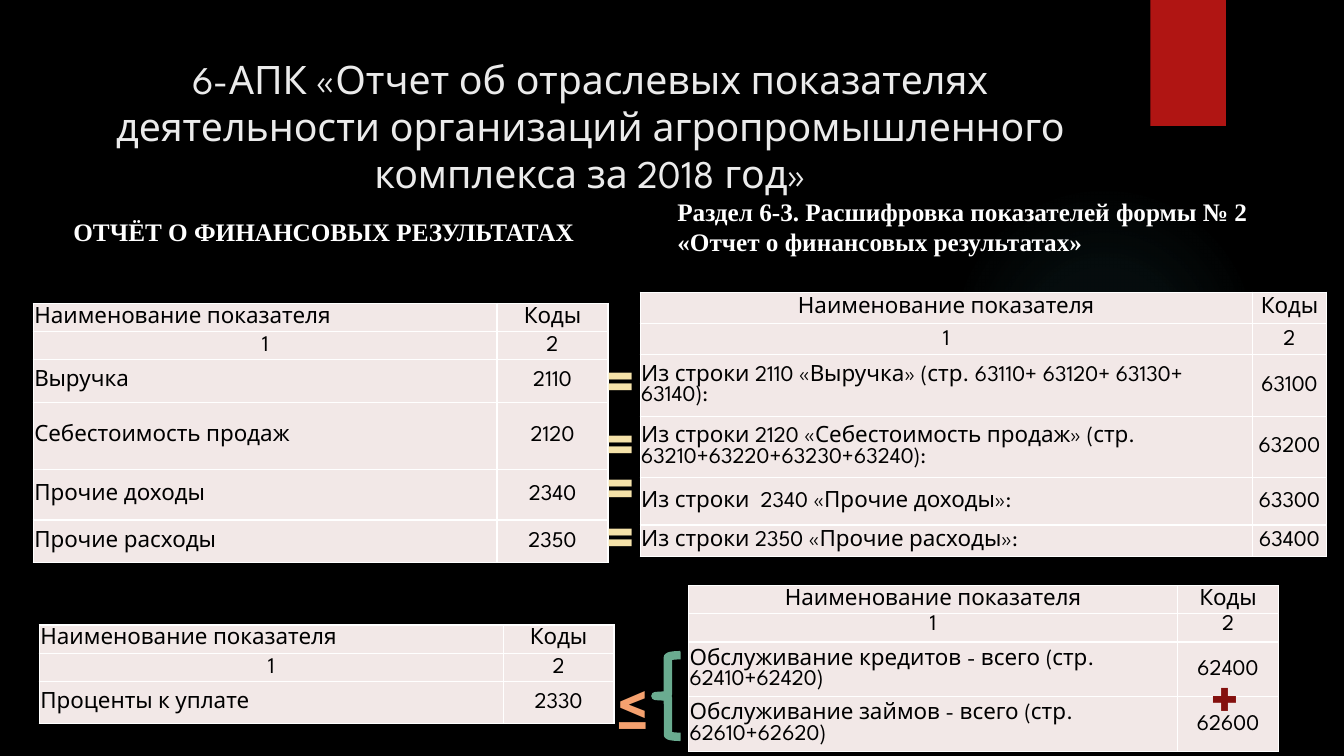
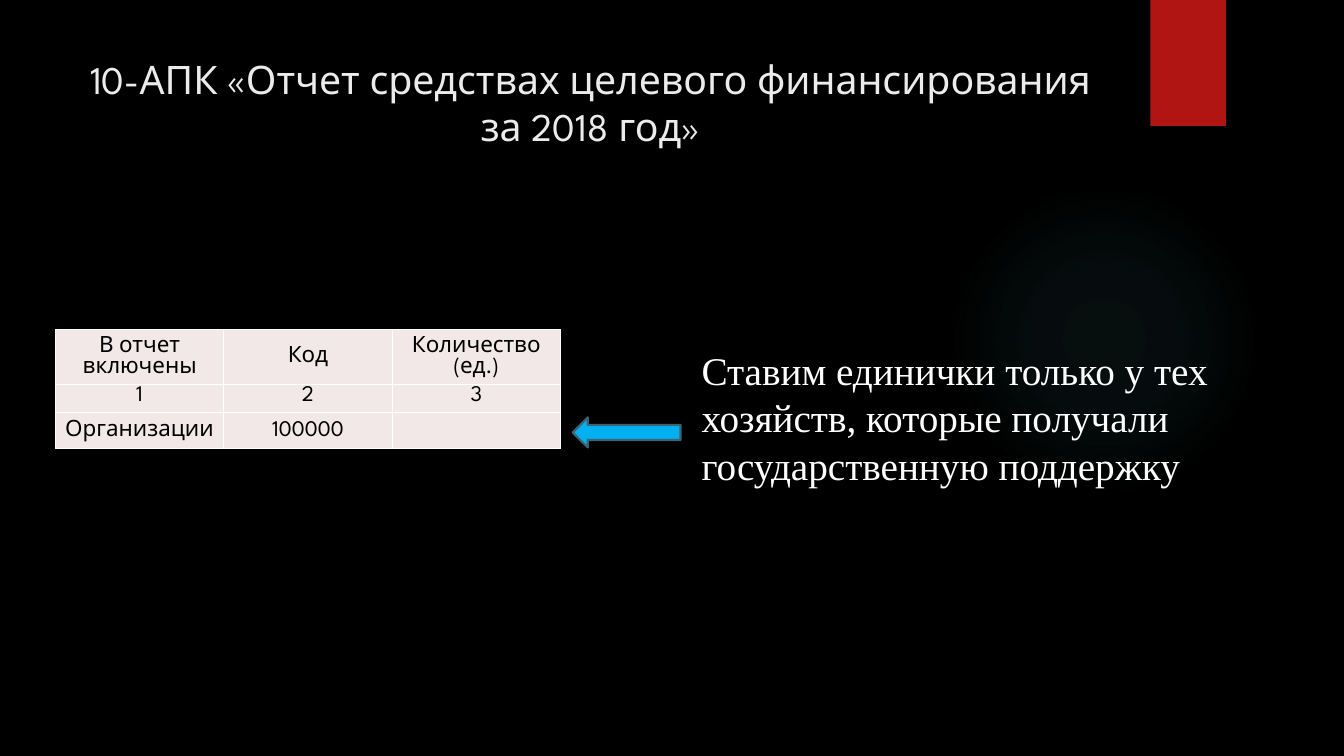
from dataclasses import dataclass

import pptx
import pptx.dml.color
import pptx.enum.shapes
import pptx.enum.text
import pptx.oxml
import pptx.oxml.ns
import pptx.util
from lxml import etree

WIDTH, HEIGHT = 13.33, 7.5
COLORS = {
    "background": "000000", "title": "EBEBEB", "text": "FFFFFF",
    "ribbon": "B01513", "glow": "50B9C1", "cell": "F2E8E7",
    "cell_text": "000000", "border": "FFFFFF", "equal": "F5E2A9",
    "less": "F4A16F", "plus": "84100E", "brace": "6AAC90",
    "arrow": "00B0F0", "arrow_line": "3E6272",
}
SANS, SERIF = "League Spartan", "Times New Roman"
SHAPE = pptx.enum.shapes.MSO_SHAPE
ALIGN = pptx.enum.text.PP_ALIGN
ANCHOR = pptx.enum.text.MSO_ANCHOR
NAME, CODE = "Наименование показателя", "Коды"


@dataclass
class Label:
    text: str
    box: tuple[float, float, float, float]
    size: float
    font: str
    color: str
    bold: bool = False
    wrap: bool = False
    align: ALIGN = ALIGN.LEFT
    anchor: ANCHOR = ANCHOR.TOP


@dataclass
class Grid:
    left: float
    top: float
    cols: list[float]
    rows: list[float]
    cells: list[tuple[str, ...]]
    left_rows: tuple[int, ...] = ()  # rows whose first cell is left-aligned
    top_row: int = -1  # row whose text sits at the top


def rgb(name: str) -> pptx.dml.color.RGBColor:
    return pptx.dml.color.RGBColor.from_string(COLORS[name])


def inches(*values: float) -> list[pptx.util.Length]:
    return [pptx.util.Inches(v) for v in values]


def style_runs(p, size: float, font: str, color: str, bold: bool = False) -> None:
    for r in p.runs:
        r.font.size = pptx.util.Pt(size)
        r.font.name = font
        r.font.bold = bold
        r.font.color.rgb = rgb(color)


def add_label(s, label: Label) -> None:
    sp = s.shapes.add_textbox(*inches(*label.box))
    tf = sp.text_frame
    tf.word_wrap = label.wrap
    tf.vertical_anchor = label.anchor
    tf.text = label.text
    p = tf.paragraphs[0]
    p.alignment = label.align
    style_runs(p, label.size, label.font, label.color, label.bold)


def add_shape(s, kind: SHAPE, box: tuple[float, float, float, float],
              fill: str = "", line: str = "", width: float = 1):
    sp = s.shapes.add_shape(kind, *inches(*box))
    sp.shadow.inherit = False
    if fill:
        sp.fill.solid()
        sp.fill.fore_color.rgb = rgb(fill)
    else:
        sp.fill.background()
    if line:
        sp.line.color.rgb = rgb(line)
        sp.line.width = pptx.util.Pt(width)
    else:
        sp.line.fill.background()
    return sp


def add_shadow(sp) -> None:
    effects = sp._element.spPr.find(pptx.oxml.ns.qn("a:effectLst"))
    effects.append(pptx.oxml.parse_xml(
        f'<a:outerShdw {pptx.oxml.ns.nsdecls("a")} blurRad="38100" dist="25400" '
        'dir="5400000" rotWithShape="0"><a:srgbClr val="000000">'
        '<a:alpha val="45000"/></a:srgbClr></a:outerShdw>'))


def add_glow(s) -> None:
    sp = add_shape(s, SHAPE.OVAL, (9.41, 1.83, 3.08, 3.08))
    stops = "".join(
        f'<a:gs pos="{pos}000"><a:srgbClr val="{COLORS["glow"]}">'
        f'<a:alpha val="{alpha}000"/></a:srgbClr></a:gs>'
        for pos, alpha in ((0, 7), (36, 6), (69, 0), (100, 0)))
    gradient = pptx.oxml.parse_xml(
        f'<a:gradFill {pptx.oxml.ns.nsdecls("a")}><a:gsLst>{stops}</a:gsLst>'
        '<a:path path="circle"><a:fillToRect l="50000" t="50000" r="50000" '
        'b="50000"/></a:path></a:gradFill>')
    spPr = sp._element.spPr
    spPr.replace(spPr.find(pptx.oxml.ns.qn("a:noFill")), gradient)


def add_borders(cell) -> None:
    tcPr = cell._tc.get_or_add_tcPr()
    for i, side in enumerate(("lnL", "lnR", "lnT", "lnB")):
        ln = etree.Element(pptx.oxml.ns.qn(f"a:{side}"), w="12700")
        fill = etree.SubElement(ln, pptx.oxml.ns.qn("a:solidFill"))
        etree.SubElement(fill, pptx.oxml.ns.qn("a:srgbClr"), val=COLORS["border"])
        tcPr.insert(i, ln)


def add_grid(s, grid: Grid) -> None:
    frame = s.shapes.add_table(
        len(grid.rows), len(grid.cols),
        *inches(grid.left, grid.top, sum(grid.cols), sum(grid.rows)))
    table = frame.table
    for col, width in zip(table.columns, grid.cols):
        col.width = pptx.util.Inches(width)
    for row, height in zip(table.rows, grid.rows):
        row.height = pptx.util.Inches(height)
    for i, texts in enumerate(grid.cells):
        for j, text in enumerate(texts):
            cell = table.cell(i, j)
            cell.margin_left = cell.margin_right = cell.margin_top = pptx.util.Inches(0.01)
            cell.margin_bottom = 0
            cell.vertical_anchor = ANCHOR.TOP if i == grid.top_row else ANCHOR.MIDDLE
            cell.fill.solid()
            cell.fill.fore_color.rgb = rgb("cell")
            add_borders(cell)
            cell.text = text
            p = cell.text_frame.paragraphs[0]
            p.alignment = ALIGN.LEFT if j == 0 and i in grid.left_rows else ALIGN.CENTER
            p.font.size = pptx.util.Pt(16)
            style_runs(p, 16, SANS, "cell_text")


def add_base(prs, title: str, title_height: float):
    """Add a blank slide with the shared background, ribbon and title."""
    s = prs.slides.add_slide(prs.slide_layouts[6])
    s.background.fill.solid()
    s.background.fill.fore_color.rgb = rgb("background")
    add_glow(s)
    add_shadow(add_shape(s, SHAPE.RECTANGLE, (11.41, 0, 0.75, HEIGHT / 6), "ribbon"))
    add_label(s, Label(title, (0.71, 0.5, 10.29, title_height), 28, SANS, "title",
                       wrap=True, align=ALIGN.CENTER))
    return s


def build_results(prs) -> None:
    s = add_base(prs, "6-АПК «Отчет об отраслевых показателях деятельности "
                      "организаций агропромышленного комплекса за 2018 год»", 1.53)
    # Headings of the two forms
    add_label(s, Label("Раздел 6-3. Расшифровка показателей формы № 2 "
                       "«Отчет о финансовых результатах»",
                       (6.62, 1.9, 6.67, 0.71), 18, SERIF, "text", True, True))
    add_label(s, Label("ОТЧЁТ О ФИНАНСОВЫХ РЕЗУЛЬТАТАХ",
                       (0.63, 2.1, 5.22, 0.4), 18, SERIF, "text", True))
    # Tables
    header = [(NAME, CODE), ("1", "2")]
    narrow_cols, header_rows = [4.6, 1.1], [0.28, 0.28]
    grids = [
        Grid(6.35, 2.9, [6.07, 0.74], [0.31, 0.31, 0.61, 0.61, 0.47, 0.31], header + [
            ("Из строки 2110 «Выручка» (стр. 63110+ 63120+ 63130+ 63140):", "63100"),
            ("Из строки 2120 «Себестоимость продаж» (стр. 63210+63220+63230+63240):",
             "63200"),
            ("Из строки  2340 «Прочие доходы»:", "63300"),
            ("Из строки 2350 «Прочие расходы»:", "63400"),
        ], (2, 3, 4, 5)),
        Grid(0.33, 3.01, narrow_cols, header_rows + [0.42, 0.67, 0.5, 0.42], header + [
            ("Выручка", "2110"),
            ("Себестоимость продаж", "2120"),
            ("Прочие доходы", "2340"),
            ("Прочие расходы", "2350"),
        ], (0, 2, 3, 4, 5)),
        Grid(0.39, 6.2, narrow_cols, header_rows + [0.42],
             header + [("Проценты к уплате", "2330")], (0, 2)),
        Grid(6.83, 5.81, [4.85, 1], header_rows + [0.54, 0.54], header + [
            ("Обслуживание кредитов - всего (стр. 62410+62420)", "62400"),
            ("Обслуживание займов - всего (стр. 62610+62620)", "62600"),
        ], (2, 3), top_row=1),
    ]
    for grid in grids:
        add_grid(s, grid)
    # Signs that link the tables
    brace = add_shape(s, SHAPE.LEFT_BRACE, (6.5, 6.5, 0.25, 0.81), line="brace", width=6)
    brace.adjustments[0], brace.adjustments[1] = 0.08, 0.5
    add_shadow(brace)
    signs = [("=", 5.92, top, "equal") for top in (3.37, 3.99, 4.43, 4.92)]
    signs += [("+", 11.91, 6.52, "plus"), ("≤", 6.04, 6.63, "less")]
    for text, left, top, color in signs:
        add_label(s, Label(text, (left, top, 0.54, 0.77), 40, SANS, color, True))


def build_funding(prs) -> None:
    s = add_base(prs, "10-АПК «Отчет средствах целевого финансирования за 2018 год»", 1.11)
    add_grid(s, Grid(0.55, 3.27, [1.67] * 3, [0.42, 0.22, 0.36], [
        ("В отчет включены", "Код", "Количество (ед.)"),
        ("1", "2", "3"),
        ("Организации", "100000", ""),
    ], top_row=1))
    # Note and its arrow
    add_label(s, Label("Ставим единички только у тех хозяйств, которые получали "
                       "государственную поддержку",
                       (6.86, 3.39, 5.67, 1.51), 28, SERIF, "text", wrap=True))
    add_shape(s, SHAPE.LEFT_ARROW, (5.68, 4.14, 1.07, 0.3), "arrow", "arrow_line", 1.5)


def main() -> None:
    prs = pptx.Presentation()
    prs.slide_width, prs.slide_height = inches(WIDTH, HEIGHT)
    build_results(prs)
    build_funding(prs)
    prs.save("out.pptx")


if __name__ == "__main__":
    main()
